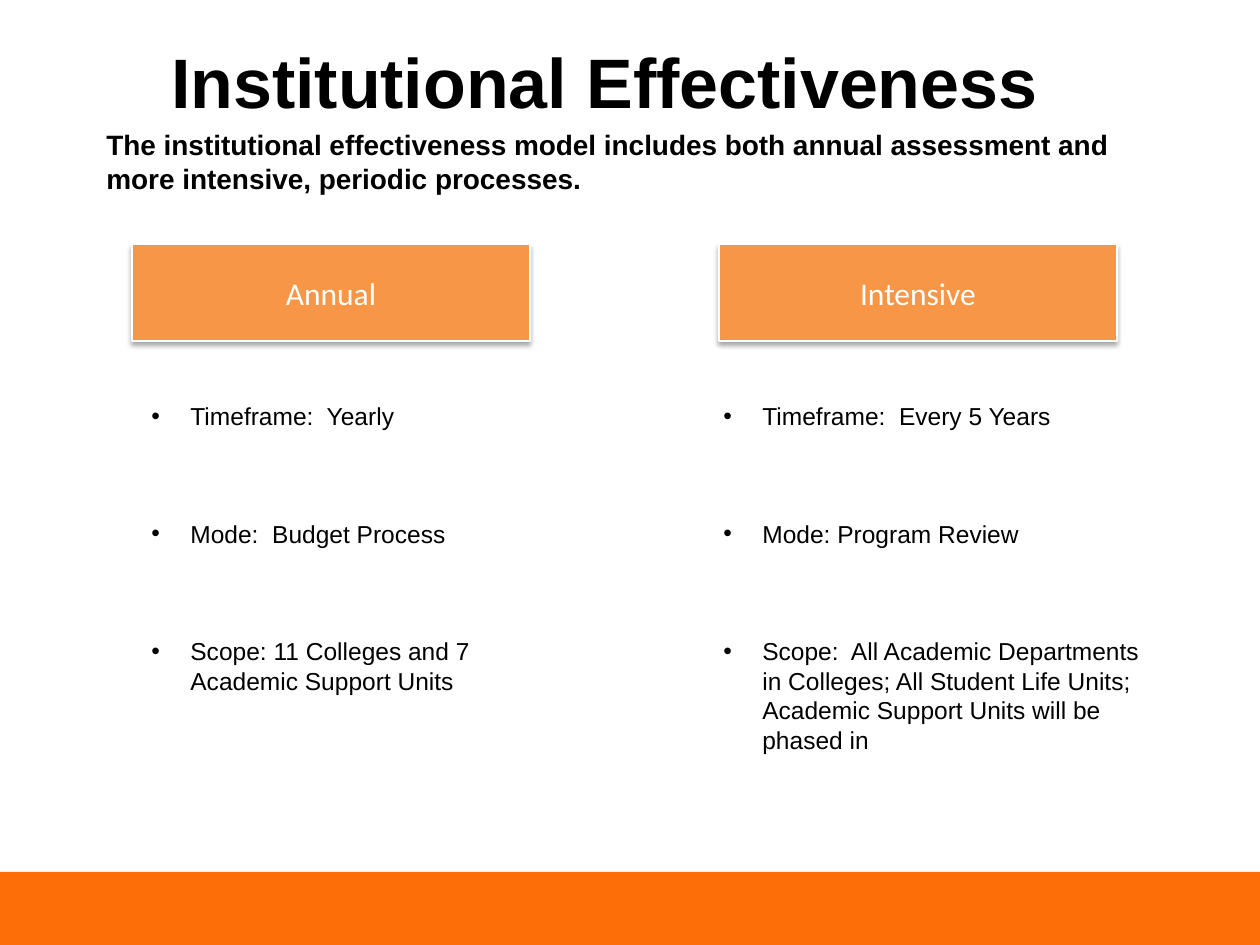
from lxml import etree
from pptx import Presentation
from pptx.dml.color import RGBColor
from pptx.enum.shapes import MSO_SHAPE
from pptx.enum.text import MSO_ANCHOR, PP_ALIGN
from pptx.oxml.ns import qn
from pptx.util import Emu, Pt

RECT = MSO_SHAPE.RECTANGLE
TOP, MIDDLE = MSO_ANCHOR.TOP, MSO_ANCHOR.MIDDLE
LEFT, CENTER = PP_ALIGN.LEFT, PP_ALIGN.CENTER

BLACK = RGBColor(0x00, 0x00, 0x00)
WHITE = RGBColor(0xFF, 0xFF, 0xFF)
BAND_ORANGE = RGBColor(0xFD, 0x6D, 0x08)
LABEL_ORANGE = RGBColor(0xF7, 0x96, 0x46)

HEADING = dict(name="Arial", size=Pt(40), bold=True)
SUMMARY = dict(name="Arial", size=Pt(16), bold=True)
LABEL = dict(name="Calibri", size=Pt(18))
POINT = dict(name="Arial", size=Pt(14))

POINT_LEADING = 16.8
POINT_GAP = Pt(3 * POINT_LEADING)
INDENT = 39

COLUMNS = [
    ("Annual", (132, 244, 398, 97), (139, 365, 411, 488), [
        "Timeframe:  Yearly",
        "Mode:  Budget Process",
        "Scope: 11 Colleges and 7 Academic Support Units",
    ]),
    ("Intensive", (719, 244, 398, 97), (711, 365, 452, 488), [
        "Timeframe:  Every 5 Years",
        "Mode: Program Review",
        "Scope:  All Academic Departments in Colleges; All Student Life Units; "
        "Academic Support Units will be phased in",
    ]),
]


def px(length):
    return Emu(round(length * 914400 / 126))


def write(paragraph, text, style, color, align=LEFT, leading=None):
    paragraph.alignment = align
    if leading:
        paragraph.line_spacing = Pt(leading)
    run = paragraph.add_run()
    run.text = text
    run.font.color.rgb = color
    for attribute, value in style.items():
        setattr(run.font, attribute, value)


def add_text_frame(slide, box, anchor=TOP, inset_top=6):
    frame = slide.shapes.add_textbox(*map(px, box)).text_frame
    frame.word_wrap = True
    frame.vertical_anchor = anchor
    frame.margin_top = px(inset_top)
    return frame


def add_rectangle(slide, box, color):
    rectangle = slide.shapes.add_shape(RECT, *map(px, box))
    rectangle.shadow.inherit = False
    rectangle.fill.solid()
    rectangle.fill.fore_color.rgb = color
    rectangle.line.fill.background()
    return rectangle


def add_soft_shadow(shape):
    effects = shape._element.spPr.find(qn("a:effectLst"))
    shadow = etree.SubElement(
        effects, qn("a:outerShdw"), blurRad=str(Pt(3.1)), dist=str(Pt(1.8)),
        dir="5400000", rotWithShape="0")
    color = etree.SubElement(shadow, qn("a:srgbClr"), val="000000")
    etree.SubElement(color, qn("a:alpha"), val="35000")


def add_bullet(paragraph):
    properties = paragraph._p.get_or_add_pPr()
    properties.set("marL", str(px(INDENT)))
    properties.set("indent", str(-px(INDENT)))
    etree.SubElement(properties, qn("a:buFont"), typeface="Arial")
    etree.SubElement(properties, qn("a:buChar"), char="•")


def add_header(slide, left, top, width):
    summary = add_text_frame(slide, (left, top + 52, width, 157), MIDDLE)
    write(summary.paragraphs[0],
          "The institutional effectiveness model includes both annual "
          "assessment and more intensive, periodic processes.",
          SUMMARY, BLACK, leading=19.4)
    heading = add_text_frame(slide, (left, top, width, 777), inset_top=8)
    write(heading.paragraphs[0], "Institutional Effectiveness ",
          HEADING, BLACK, CENTER, leading=48)


def add_column(slide, title, label_box, points_box, points):
    # Column label
    label = add_rectangle(slide, label_box, LABEL_ORANGE)
    label.line.color.rgb = WHITE
    label.line.width = Pt(0.75)
    add_soft_shadow(label)
    label.text_frame.vertical_anchor = MIDDLE
    write(label.text_frame.paragraphs[0], title, LABEL, WHITE, CENTER)

    # Bulleted points
    frame = add_text_frame(slide, points_box, inset_top=36)
    for index, point in enumerate(points):
        paragraph = frame.add_paragraph() if index else frame.paragraphs[0]
        if index:
            paragraph.space_before = POINT_GAP
        paragraph.line_spacing = Pt(POINT_LEADING)
        add_bullet(paragraph)
        write(paragraph, point, POINT, BLACK)


def main():
    presentation = Presentation()
    presentation.slide_width = px(1260)
    presentation.slide_height = px(945)
    slide = presentation.slides.add_slide(presentation.slide_layouts[6])

    add_rectangle(slide, (0, 872, 1260, 73), BAND_ORANGE)
    add_header(slide, 94, 31, 1040)
    for column in COLUMNS:
        add_column(slide, *column)

    presentation.save("out.pptx")


if __name__ == "__main__":
    main()
